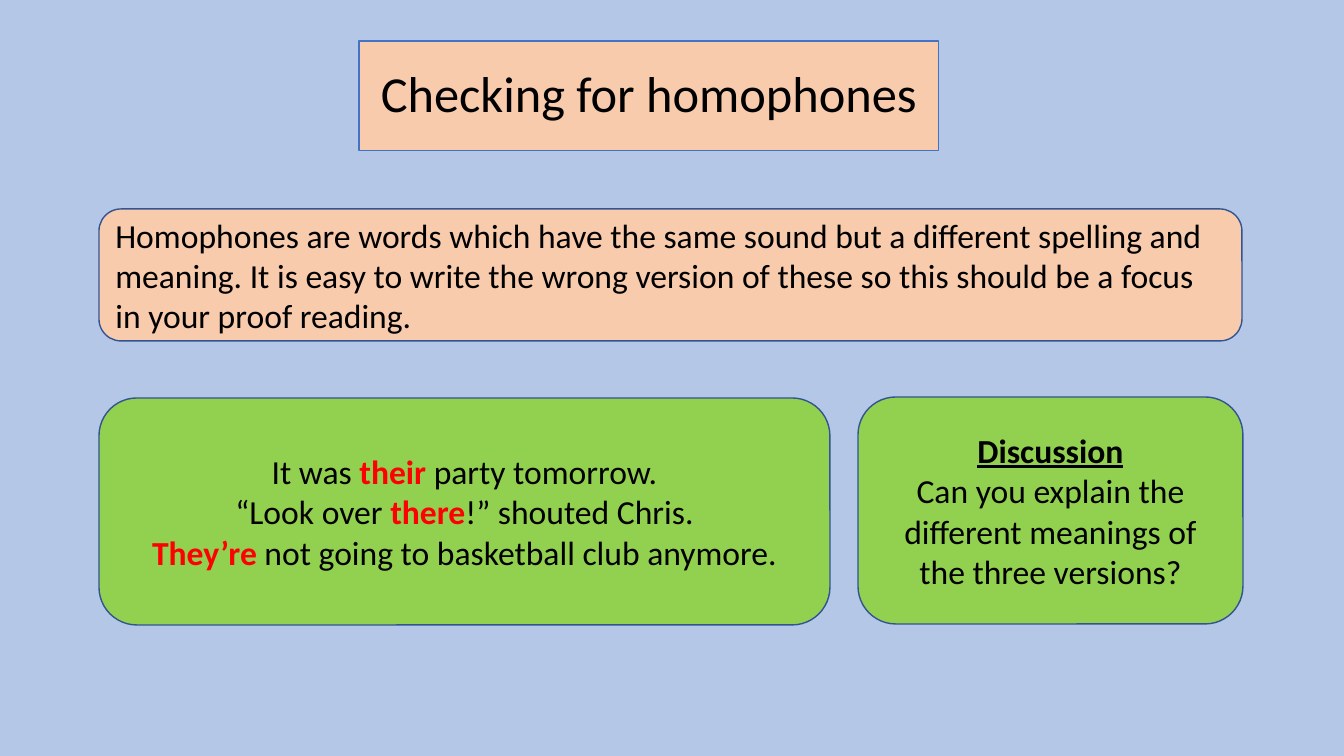
from pptx import Presentation
from pptx.dml.color import RGBColor
from pptx.enum.shapes import MSO_SHAPE
from pptx.enum.text import MSO_ANCHOR, MSO_AUTO_SIZE, PP_ALIGN
from pptx.util import Emu, Pt

ROUNDED = MSO_SHAPE.ROUNDED_RECTANGLE
MIDDLE = MSO_ANCHOR.MIDDLE
NO_AUTOFIT = MSO_AUTO_SIZE.NONE
LEFT, CENTER = PP_ALIGN.LEFT, PP_ALIGN.CENTER

SLIDE_WIDTH, SLIDE_HEIGHT = 1344, 756
EMU_PER_PX = 914400 / 100.8
TITLE_ONLY_LAYOUT = 5
FONT = "Calibri"
BLACK, RED = "000000", "FF0000"
SKY, PEACH, GREEN = "B4C7E7", "F8CBAD", "92D050"
TITLE_LINE, BOX_LINE = "4472C4", "325491"

PLAIN = {}
HOMOPHONE = {"color": RED, "bold": True}
HEADING = {"bold": True, "underline": True}

INTRO = [
    [("Homophones are words which have the same sound but a different spelling and "
      "meaning. It is easy to write the wrong version of these so this should be a "
      "focus in your proof reading.", PLAIN)],
]
EXAMPLES = [
    [("It was ", PLAIN), ("their ", HOMOPHONE), ("party tomorrow.", PLAIN)],
    [("“Look over ", PLAIN), ("there", HOMOPHONE), ("!” shouted Chris.", PLAIN)],
    [("They’re", HOMOPHONE), (" not going to basketball club anymore.", PLAIN)],
]
DISCUSSION = [
    [("Discussion", HEADING)],
    [("Can you explain the different meanings of the three versions?", PLAIN)],
]


def px(length):
    """Turn whole pixels into EMU."""
    return Emu(round(length * EMU_PER_PX))


def rgb(value):
    """Turn a hex string into a colour."""
    return RGBColor.from_string(value)


def paint(shape, fill, line, line_width):
    """Give a shape a solid fill and an outline."""
    shape.fill.solid()
    shape.fill.fore_color.rgb = rgb(fill)
    shape.line.color.rgb = rgb(line)
    shape.line.width = Pt(line_width)


def add_run(paragraph, text, size, color=BLACK, bold=False, underline=False):
    """Append one formatted run to a paragraph."""
    run = paragraph.add_run()
    run.text = text
    run.font.name = FONT
    run.font.size = Pt(size)
    run.font.bold = bold
    run.font.underline = underline
    run.font.color.rgb = rgb(color)


def write_text(shape, lines, size, alignment):
    """Fill a shape with paragraphs made of styled runs."""
    frame = shape.text_frame
    frame.word_wrap = True
    frame.auto_size = NO_AUTOFIT
    frame.vertical_anchor = MIDDLE
    for index, line in enumerate(lines):
        paragraph = frame.add_paragraph() if index else frame.paragraphs[0]
        paragraph.alignment = alignment
        for text, style in line:
            add_run(paragraph, text, size, **style)


def set_title(slide, text, left, top, width, height):
    """Place and format the title placeholder."""
    title = slide.shapes.title
    title.left, title.top = px(left), px(top)
    title.width, title.height = px(width), px(height)
    paint(title, PEACH, TITLE_LINE, 0.75)
    write_text(title, [[(text, PLAIN)]], 36, CENTER)
    title.text_frame.paragraphs[0].line_spacing = 0.9


def add_box(slide, left, top, width, height, fill, lines, alignment=CENTER):
    """Add a rounded box holding text."""
    box = slide.shapes.add_shape(ROUNDED, px(left), px(top), px(width), px(height))
    box.shadow.inherit = False
    paint(box, fill, BOX_LINE, 1)
    write_text(box, lines, 24, alignment)


def main():
    """Build the homophones slide and save it."""
    presentation = Presentation()
    presentation.slide_width = px(SLIDE_WIDTH)
    presentation.slide_height = px(SLIDE_HEIGHT)
    slide = presentation.slides.add_slide(presentation.slide_layouts[TITLE_ONLY_LAYOUT])
    slide.background.fill.solid()
    slide.background.fill.fore_color.rgb = rgb(SKY)

    set_title(slide, "Checking for homophones", 359, 41, 580, 110)
    add_box(slide, 99, 209, 1143, 132, PEACH, INTRO, LEFT)
    add_box(slide, 99, 398, 731, 227, GREEN, EXAMPLES)
    add_box(slide, 858, 397, 385, 227, GREEN, DISCUSSION)
    presentation.save("out.pptx")


if __name__ == "__main__":
    main()
